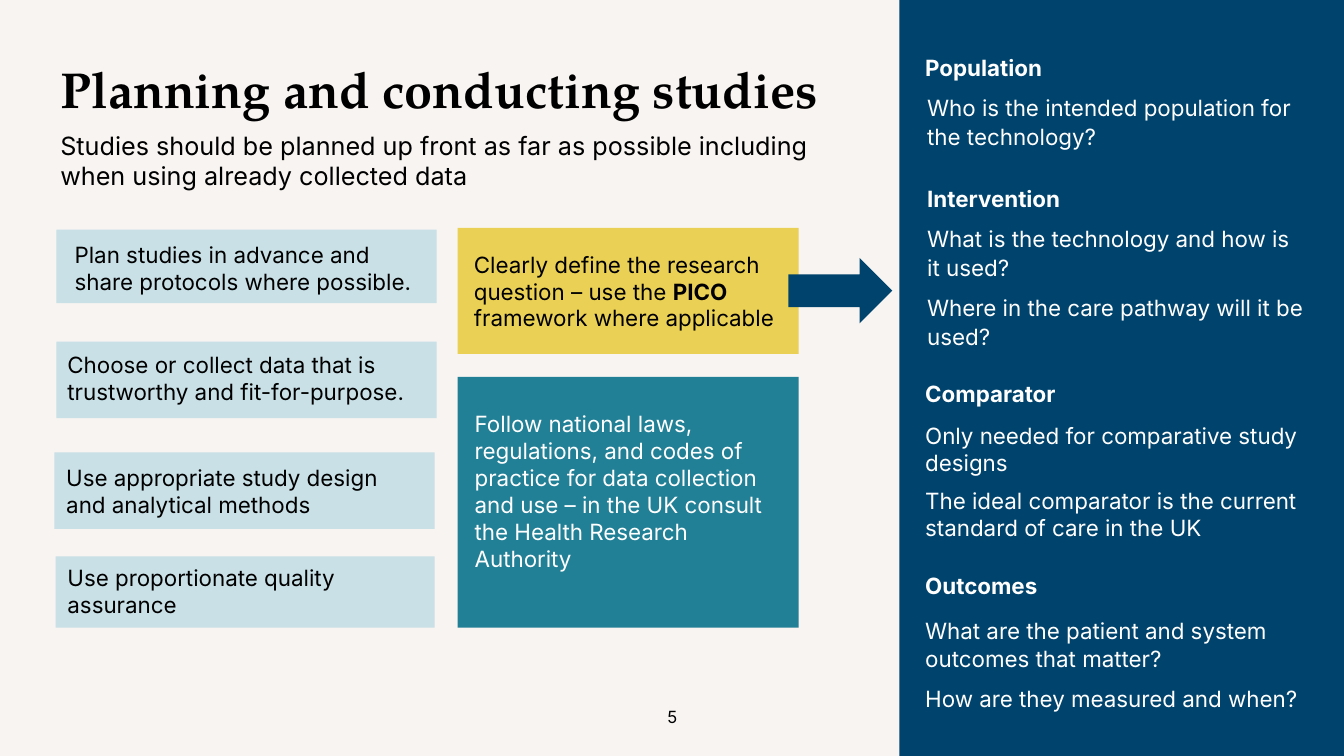
"""Build the slide on planning and conducting studies, with its PICO side panel."""
from dataclasses import dataclass

from pptx import Presentation
from pptx.dml.color import RGBColor
from pptx.enum import shapes, text
from pptx.util import Cm, Pt


@dataclass(frozen=True)
class Theme:
    """Colours, fonts and type sizes."""
    paper: str = "F7F4F1"
    navy: str = "00436C"
    pale: str = "C8E0E6"
    gold: str = "EAD054"
    teal: str = "228096"
    ink: str = "000000"
    white: str = "FFFFFF"
    serif: str = "TeX Gyre Pagella"
    sans: str = "Inter"
    title: int = 36
    lead: int = 18
    body: int = 16
    small: int = 12


T = Theme()

TITLE = "Planning and conducting studies"
LEAD = ("Studies should be planned up front as far as possible "
        "including when using already collected data")
PAGE = "5"

CARDS = [
    ((1.42, 5.79, 9.58, 1.85), (0.46, 0.28, 0.25), T.pale, T.ink,
     [("Plan studies in advance and share protocols where possible.", False)]),
    ((1.42, 8.61, 9.58, 1.93), (0.28, 0.25, 0.25), T.pale, T.ink,
     [("Choose or collect data that is trustworthy and fit-for-purpose.", False)]),
    ((1.37, 11.4, 9.58, 1.93), (0.3, 0.3, 1), T.pale, T.ink,
     [("Use appropriate study design and analytical methods", False)]),
    ((1.4, 14.02, 9.55, 1.8), (0.3, 0.2, 1), T.pale, T.ink,
     [("Use proportionate quality assurance", False)]),
    ((11.53, 5.74, 8.59, 3.18), (0.41, 0.58, 0.43), T.gold, T.ink,
     [("Clearly define the research question – use the ", False),
      ("PICO", True), (" framework where applicable", False)]),
    ((11.53, 9.5, 8.59, 6.32), (0.43, 0.84, 0.43), T.teal, T.white,
     [("Follow national laws, regulations, and codes of practice for data "
       "collection and use – in the UK consult the Health Research Authority", False)]),
]

PICO = [
    ("Population", (23.06, 1.19), (23.11, 2.21, 1.68, 1.07),
     ["Who is the intended population for the technology?"]),
    ("Intervention", (23.11, 4.5), (23.11, 5.51, 3.43, 1.07),
     ["What is the technology and how is it used?",
      "Where in the care pathway will it be used?"]),
    ("Comparator", (23.06, 9.4), (23.06, 10.52, 3.28, 1.0),
     ["Only needed for comparative study designs",
      "The ideal comparator is the current standard of care in the UK"]),
    ("Outcomes", (23.06, 14.25), (23.06, 15.37, 2.69, 1.07),
     ["What are the patient and system outcomes that matter?",
      "How are they measured and when?"]),
]
PANEL = (22.66, 0, 11.2, 19.05)
ARROW = (19.86, 6.5, 2.62, 1.65)
NOTE = 10.05
HEAD = 0.94


def write(para, runs, size, ink, face=T.sans):
    for words, bold in runs:
        run = para.add_run()
        run.text = words
        font = run.font
        font.name, font.size, font.bold = face, Pt(size), bold
        font.color.rgb = RGBColor.from_string(ink)


def block(slide, kind, box, fill):
    shape = slide.shapes.add_shape(kind, *map(Cm, box))
    shape.shadow.inherit = False
    shape.fill.solid()
    shape.fill.fore_color.rgb = RGBColor.from_string(fill)
    shape.line.fill.background()
    return shape


def label(slide, box, lines, size, ink, bold=False, pitch=1.0, after=0):
    frame = slide.shapes.add_textbox(*map(Cm, box)).text_frame
    frame.word_wrap = True
    for i, line in enumerate(lines):
        para = frame.add_paragraph() if i else frame.paragraphs[0]
        para.line_spacing, para.space_after = pitch, Pt(after)
        write(para, [(line, bold)], size, ink)
    return frame


def card(slide, box, inset, fill, ink, runs):
    frame = block(slide, shapes.MSO_SHAPE.RECTANGLE, box, fill).text_frame
    frame.word_wrap = True
    frame.vertical_anchor = text.MSO_ANCHOR.TOP
    frame.margin_left, frame.margin_top, frame.margin_right = map(Cm, inset)
    frame.margin_bottom = 0
    para = frame.paragraphs[0]
    para.alignment = text.PP_ALIGN.LEFT
    write(para, runs, T.body, ink)


def heading(slide):
    title = slide.shapes.title
    title.left, title.top, title.width, title.height = map(Cm, (1.27, 1.52, 21, 1.6))
    frame = title.text_frame
    frame.word_wrap = True
    frame.auto_size = text.MSO_AUTO_SIZE.NONE
    frame.vertical_anchor = text.MSO_ANCHOR.TOP
    para = frame.paragraphs[0]
    para.alignment, para.line_spacing = text.PP_ALIGN.LEFT, 0.9
    write(para, [(TITLE, True)], T.title, T.ink, T.serif)


def number(slide):
    frame = label(slide, (13.13, 17.55, 7.62, 1.02), [PAGE], T.small, T.ink)
    frame.vertical_anchor = text.MSO_ANCHOR.MIDDLE
    frame.paragraphs[0].alignment = text.PP_ALIGN.CENTER


def main():
    deck = Presentation()
    deck.slide_width, deck.slide_height = Cm(33.86), Cm(19.05)
    slide = deck.slides.add_slide(deck.slide_layouts[5])
    back = slide.background.fill
    back.solid()
    back.fore_color.rgb = RGBColor.from_string(T.paper)
    block(slide, shapes.MSO_SHAPE.RECTANGLE, PANEL, T.navy)
    heading(slide)
    label(slide, (1.27, 3.15, 20.24, 1.8), [LEAD], T.lead, T.ink)
    for item in CARDS:
        card(slide, *item)
    block(slide, shapes.MSO_SHAPE.RIGHT_ARROW, ARROW, T.navy)
    for name, spot, (left, top, height, pitch), lines in PICO:
        label(slide, (*spot, NOTE, HEAD), [name], T.body, T.white, True, 1.07, 8)
        label(slide, (left, top, NOTE, height), lines, T.body, T.white,
              pitch=pitch, after=8)
    number(slide)
    deck.save("out.pptx")


if __name__ == "__main__":
    main()
